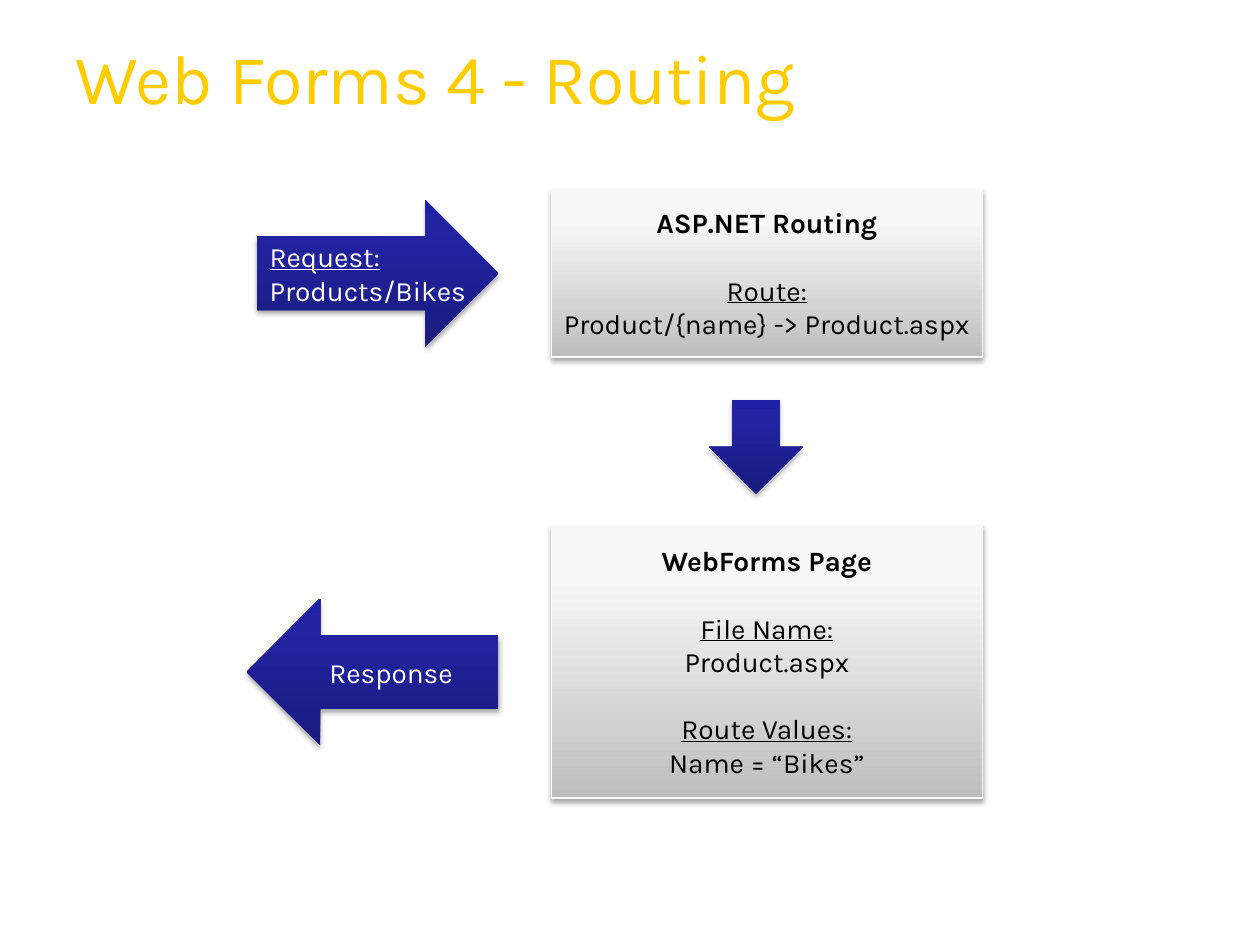
from dataclasses import dataclass
from lxml.etree import SubElement
from pptx import Presentation
from pptx.dml.color import RGBColor
from pptx.enum.shapes import MSO_SHAPE as Preset
from pptx.enum.text import MSO_ANCHOR as Anchor, MSO_AUTO_SIZE as AutoSize, PP_ALIGN as Align
from pptx.oxml.ns import qn
from pptx.util import Pt


@dataclass(frozen=True)
class Theme:
    font: str = "Karla"
    title_size: float = 40
    body_size: float = 16
    blank_line: float = 19.2
    title: str = "FFCC00"
    light: str = "FFFFFF"
    dark: str = "000000"
    edge: str = "F9F9F9"
    blue: tuple = ((0, "1B1B7E"), (80, "2323A3"), (100, "2020A6"))
    grey: tuple = ((0, "BEBEBE"), (80, "F7F7F7"), (100, "F8F8F8"))


theme = Theme()


def add_shadow(effects, blur, distance, alpha):
    shadow = SubElement(effects, qn("a:outerShdw"), blurRad=str(Pt(blur)),
                        dist=str(Pt(distance)), dir="5400000", algn="ctr", rotWithShape="0")
    color = SubElement(shadow, qn("a:srgbClr"), val=theme.dark)
    SubElement(color, qn("a:alpha"), val=str(alpha * 1000))


def add_span(para, text, size, color, style=""):
    span = para.add_run()
    span.text = text
    span.font.name = theme.font
    span.font.size = Pt(size)
    span.font.color.rgb = RGBColor.from_string(color)
    span.font.bold = style == "bold"
    span.font.underline = style == "underline"
    return span


deck = Presentation()
deck.slide_width, deck.slide_height = Pt(720), Pt(540)
page = deck.slides.add_slide(deck.slide_layouts[5])

# Title with a hard drop shadow
title = page.shapes.title
title.left, title.top, title.width, title.height = Pt(36), Pt(12.24), Pt(648), Pt(43.92)
frame = title.text_frame
frame.auto_size = AutoSize.NONE
frame.vertical_anchor = Anchor.TOP
frame.margin_top = Pt(7.2)
frame.paragraphs[0].alignment = Align.LEFT
span = add_span(frame.paragraphs[0], "Web Forms 4 - Routing", theme.title_size, theme.title)
effects = SubElement(span.font._element, qn("a:effectLst"))
span.font._element.find(qn("a:solidFill")).addnext(effects)
add_shadow(effects, 0, 1.5, 100)

# Flow shapes: preset, position, gradient, edge, text colour, alignment,
# and groups of lines that are set one blank line apart
flow = [
    (Preset.RIGHT_ARROW, (147, 114.3, 138, 84), theme.blue, None, theme.light, Align.LEFT,
     [[("Request:", "underline"), ("Products/Bikes", "")]]),
    (Preset.RECTANGLE, (315, 108, 246.5, 96), theme.grey, theme.edge, theme.dark, Align.CENTER,
     [[("ASP.NET Routing", "bold")],
      [("Route:", "underline"), ("Product/{name} -> Product.aspx", "")]]),
    (Preset.RECTANGLE, (315, 300, 246.5, 156), theme.grey, theme.edge, theme.dark, Align.CENTER,
     [[("WebForms Page", "bold")],
      [("File Name:", "underline"), ("Product.aspx", "")],
      [("Route Values:", "underline"), ("Name = “Bikes”", "")]]),
    (Preset.LEFT_ARROW, (141, 342, 144, 84), theme.blue, None, theme.light, Align.CENTER,
     [[("Response", "")]]),
    (Preset.DOWN_ARROW, (405, 228.3, 54, 54), theme.blue, None, theme.light, Align.CENTER, []),
]

for preset, place, stops, edge, color, alignment, groups in flow:
    box = page.shapes.add_shape(preset, *[Pt(length) for length in place])

    # Gradient running upwards
    box.fill.gradient()
    box.fill.gradient_angle = 90
    properties = box._element.spPr
    stop_list = properties.find(qn("a:gradFill")).find(qn("a:gsLst"))
    stop_list.clear()
    for position, shade in stops:
        stop = SubElement(stop_list, qn("a:gs"), pos=str(position * 1000))
        SubElement(stop, qn("a:srgbClr"), val=shade)

    # Edge and shadow
    if edge:
        box.line.color.rgb = RGBColor.from_string(edge)
        box.line.width = Pt(0.75)
    else:
        box.line.fill.background()
    box.shadow.inherit = False
    add_shadow(properties.find(qn("a:effectLst")), 3.1, 1.8, 35)

    # Text
    frame = box.text_frame
    frame.word_wrap = False
    frame.vertical_anchor = Anchor.MIDDLE
    para = frame.paragraphs[0]
    for group_number, group in enumerate(groups):
        for line_number, (text, style) in enumerate(group):
            if group_number or line_number:
                para = frame.add_paragraph()
            if group_number and not line_number:
                para.space_before = Pt(theme.blank_line)
            para.alignment = alignment
            add_span(para, text, theme.body_size, color, style)

deck.save("out.pptx")
